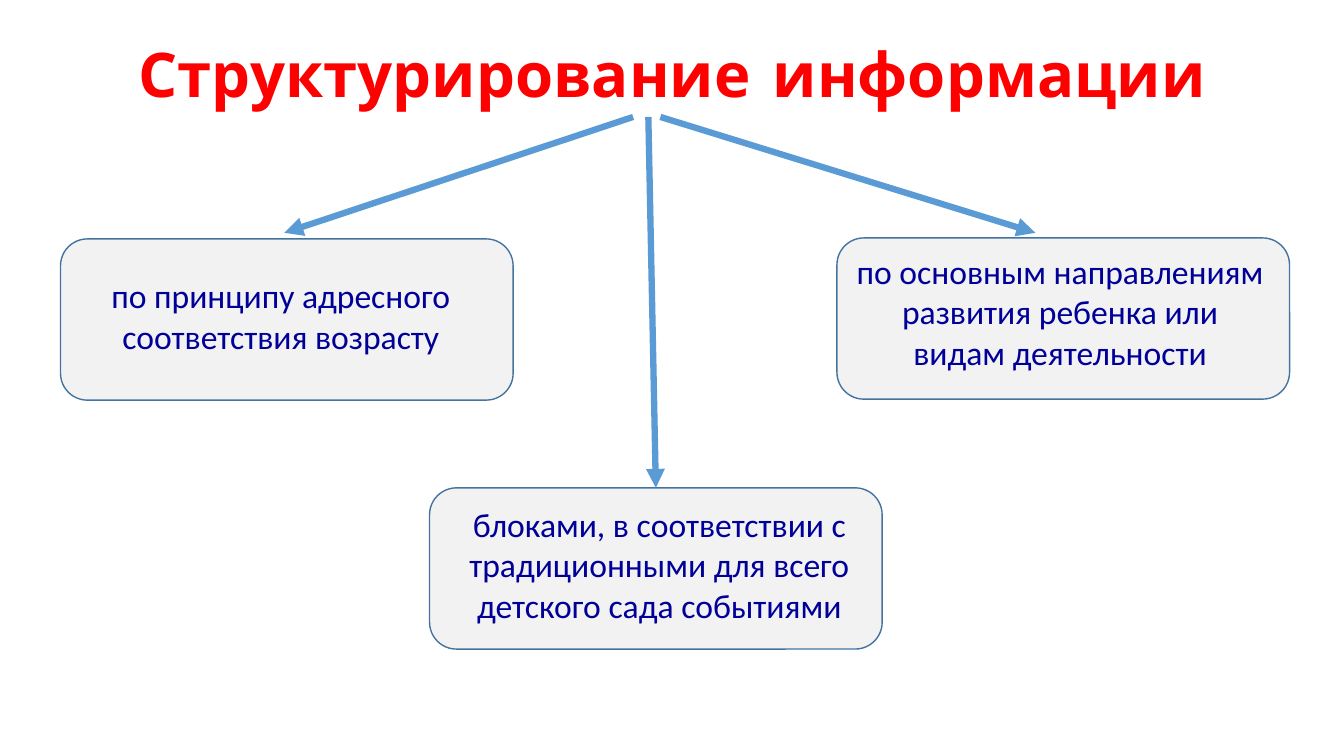
from dataclasses import dataclass

from lxml.etree import SubElement
from pptx import Presentation
from pptx.dml.color import RGBColor
from pptx.enum.shapes import MSO_CONNECTOR, MSO_SHAPE
from pptx.enum.text import MSO_ANCHOR, MSO_AUTO_SIZE, PP_ALIGN
from pptx.oxml.ns import qn
from pptx.util import Inches, Pt

WIDTH, HEIGHT = Inches(13.33), Inches(7.5)

RED = RGBColor(0xFF, 0x00, 0x00)
NAVY = RGBColor(0x00, 0x00, 0x99)
LIGHT_GREY = RGBColor(0xF2, 0xF2, 0xF2)
STEEL_BLUE = RGBColor(0x43, 0x73, 0x9E)
SKY_BLUE = RGBColor(0x5B, 0x9B, 0xD5)

# All lengths below are percentages of the slide's width or height.
CARD_SIZE = (33.68, 21.33)
ARROW_TOP = 15.47
TOP_SIDE = 0


@dataclass
class Branch:
    text: str
    card_corner: tuple
    text_box: tuple
    arrow_left: float
    arrow_end: tuple = None  # None joins the arrow to the card's top side


BRANCHES = [
    Branch("по принципу адресного соответствия возрасту",
           (4.5, 31.6), (4.5, 35.73, 32.78, 12.13), 47.11, (21.16, 30.8)),
    Branch("по основным направлениям развития ребенка или видам деятельности",
           (62.27, 31.47), (62.94, 32.53, 31.88, 17.47), 49.14, (77.04, 30.8)),
    Branch("блоками, в соответствии с традиционными для всего детского сада событиями",
           (31.96, 64.53), (33.38, 66, 31.36, 17.47), 48.24),
]


def scaled(*percentages):
    """Turn alternating horizontal and vertical percentages into lengths."""
    return [round(value * (HEIGHT if index % 2 else WIDTH) / 100)
            for index, value in enumerate(percentages)]


def add_text(slide, box, text, font_name, size, color, bold=False):
    frame = slide.shapes.add_textbox(*scaled(*box)).text_frame
    frame.word_wrap = True
    paragraph = frame.paragraphs[0]
    paragraph.text = text
    paragraph.alignment = PP_ALIGN.CENTER
    font = paragraph.font
    font.name, font.size, font.bold = font_name, Pt(size), bold
    font.color.rgb = color
    return frame


def add_title(slide, text):
    frame = add_text(slide, (6.9, 1.73, 86.27, 16.93), text, "Comic Neue", 44, RED, bold=True)
    frame.vertical_anchor = MSO_ANCHOR.MIDDLE
    frame.paragraphs[0].line_spacing = 0.9


def add_card(slide, corner):
    card = slide.shapes.add_shape(MSO_SHAPE.ROUNDED_RECTANGLE, *scaled(*corner, *CARD_SIZE))
    card.shadow.inherit = False
    card.fill.solid()
    card.fill.fore_color.rgb = LIGHT_GREY
    card.line.color.rgb = STEEL_BLUE
    card.line.width = Pt(1)
    return card


def add_arrow(slide, start, end):
    arrow = slide.shapes.add_connector(MSO_CONNECTOR.STRAIGHT, *scaled(*start, *end))
    arrow.line.color.rgb = SKY_BLUE
    arrow.line.width = Pt(4.5)
    SubElement(arrow.line._get_or_add_ln(), qn("a:tailEnd"), type="triangle")
    SubElement(arrow._element.spPr, qn("a:effectLst"))
    return arrow


def add_branch(slide, branch):
    card = add_card(slide, branch.card_corner)
    frame = add_text(slide, branch.text_box, branch.text, "Calibri", 24, NAVY)
    frame.auto_size = MSO_AUTO_SIZE.SHAPE_TO_FIT_TEXT
    arrow = add_arrow(slide, (branch.arrow_left, ARROW_TOP),
                      branch.arrow_end or branch.card_corner)
    if branch.arrow_end is None:
        arrow.end_connect(card, TOP_SIDE)


def main():
    presentation = Presentation()
    presentation.slide_width, presentation.slide_height = WIDTH, HEIGHT
    slide = presentation.slides.add_slide(presentation.slide_layouts[6])
    add_title(slide, "Структурирование информации")
    for branch in BRANCHES:
        add_branch(slide, branch)
    presentation.save("out.pptx")


if __name__ == "__main__":
    main()
